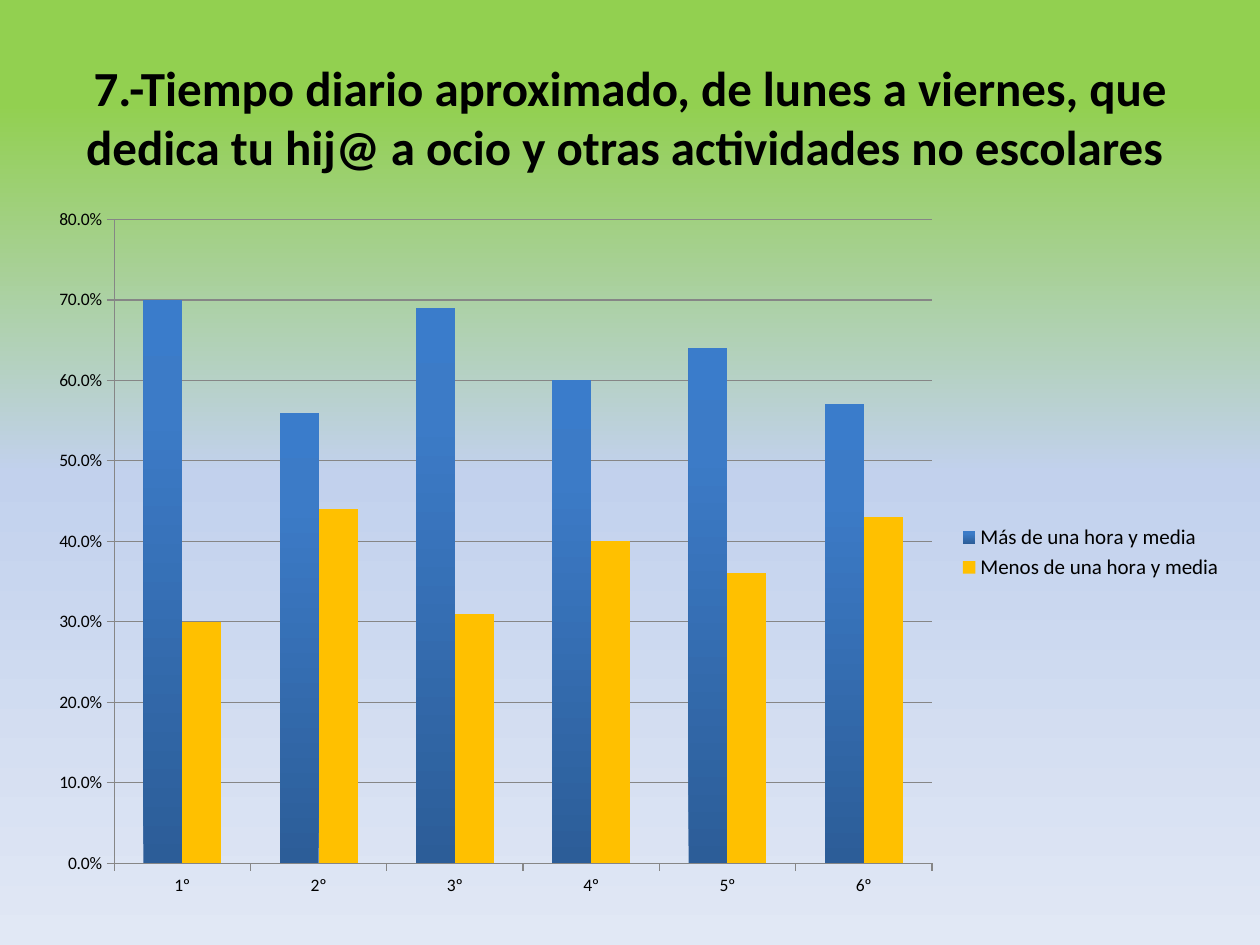
from copy import deepcopy

from pptx import Presentation
from pptx.chart.data import CategoryChartData
from pptx.dml.color import RGBColor
from pptx.enum import chart as ch, text
from pptx.util import Pt

TITLE = ("7.-Tiempo diario aproximado, de lunes a viernes, que dedica tu hij@ "
         "a ocio y otras actividades no escolares ")
GRADES = ["1º", "2º", "3º", "4º", "5º", "6º"]
SHARES = {
    "Más de una hora y media": [0.7, 0.56, 0.69, 0.6, 0.64, 0.57],
    "Menos de una hora y media": [0.3, 0.44, 0.31, 0.4, 0.36, 0.43],
}

FONT = "Calibri"
BLACK = RGBColor(0x00, 0x00, 0x00)
GREY = RGBColor(0x86, 0x86, 0x86)
AMBER = RGBColor(0xFF, 0xC0, 0x00)
BACKGROUND_STOPS = [
    (0.11, RGBColor(0x92, 0xD0, 0x50)),
    (0.5, RGBColor(0xC2, 0xD1, 0xED)),
    (1, RGBColor(0xE1, 0xE8, 0xF5)),
]
BLUE_STOPS = [
    (0, RGBColor(0x2C, 0x5D, 0x98)),
    (0.8, RGBColor(0x3C, 0x7B, 0xC7)),
    (1, RGBColor(0x3A, 0x7C, 0xCB)),
]


def fill_gradient(fill, owner, stops, angle):
    """Give fill, which lies inside the XML element owner, the listed stops."""
    fill.gradient()
    fill.gradient_angle = angle
    stop_list = owner.xpath(".//a:gsLst")[0]
    while len(stop_list) < len(stops):
        stop_list.append(deepcopy(stop_list[-1]))
    for stop, (position, color) in zip(fill.gradient_stops, stops):
        stop.position = position
        stop.color.rgb = color


def style_font(font, size):
    font.name = FONT
    font.size = Pt(size)
    font.color.rgb = BLACK


prs = Presentation()
prs.slide_width, prs.slide_height = Pt(720), Pt(540)
slide = prs.slides.add_slide(prs.slide_layouts[6])
fill_gradient(slide.background.fill, slide.element, BACKGROUND_STOPS, 270)

title = slide.shapes.add_textbox(Pt(36), Pt(21.6), Pt(648), Pt(90)).text_frame
title.word_wrap = True
title.vertical_anchor = text.MSO_ANCHOR.MIDDLE
title.text = TITLE
heading = title.paragraphs[0]
heading.alignment = text.PP_ALIGN.CENTER
style_font(heading.runs[0].font, 28)
heading.runs[0].font.bold = True

data = CategoryChartData(number_format="0.0%")
data.categories = GRADES
for answer, shares in SHARES.items():
    data.add_series(answer, shares)
chart = slide.shapes.add_chart(
    ch.XL_CHART_TYPE.COLUMN_CLUSTERED,
    Pt(20.16), Pt(111.6), Pt(686.16), Pt(408.24), data).chart
style_font(chart.font, 10)
chart.has_title = False
chart.has_legend = True
chart.legend.position = ch.XL_LEGEND_POSITION.RIGHT
chart.legend.include_in_layout = False
style_font(chart.legend.font, 12)

shares_axis = chart.value_axis
shares_axis.minimum_scale, shares_axis.maximum_scale = 0, 0.8
shares_axis.major_unit = 0.1
shares_axis.has_major_gridlines = True
shares_axis.tick_labels.number_format = "0.0%"
shares_axis.tick_labels.number_format_is_linked = False
for axis in (chart.category_axis, shares_axis):
    axis.major_tick_mark = ch.XL_TICK_MARK.OUTSIDE
for part in (chart.category_axis, shares_axis, shares_axis.major_gridlines):
    part.format.line.color.rgb = GREY
    part.format.line.width = Pt(0.75)

plot = chart.plots[0]
plot.gap_width = 150
plot.overlap = 0
plot.vary_by_categories = False
more, less = plot.series
fill_gradient(more.format.fill, more._element, BLUE_STOPS, 90)
less.format.fill.solid()
less.format.fill.fore_color.rgb = AMBER

prs.save("out.pptx")
